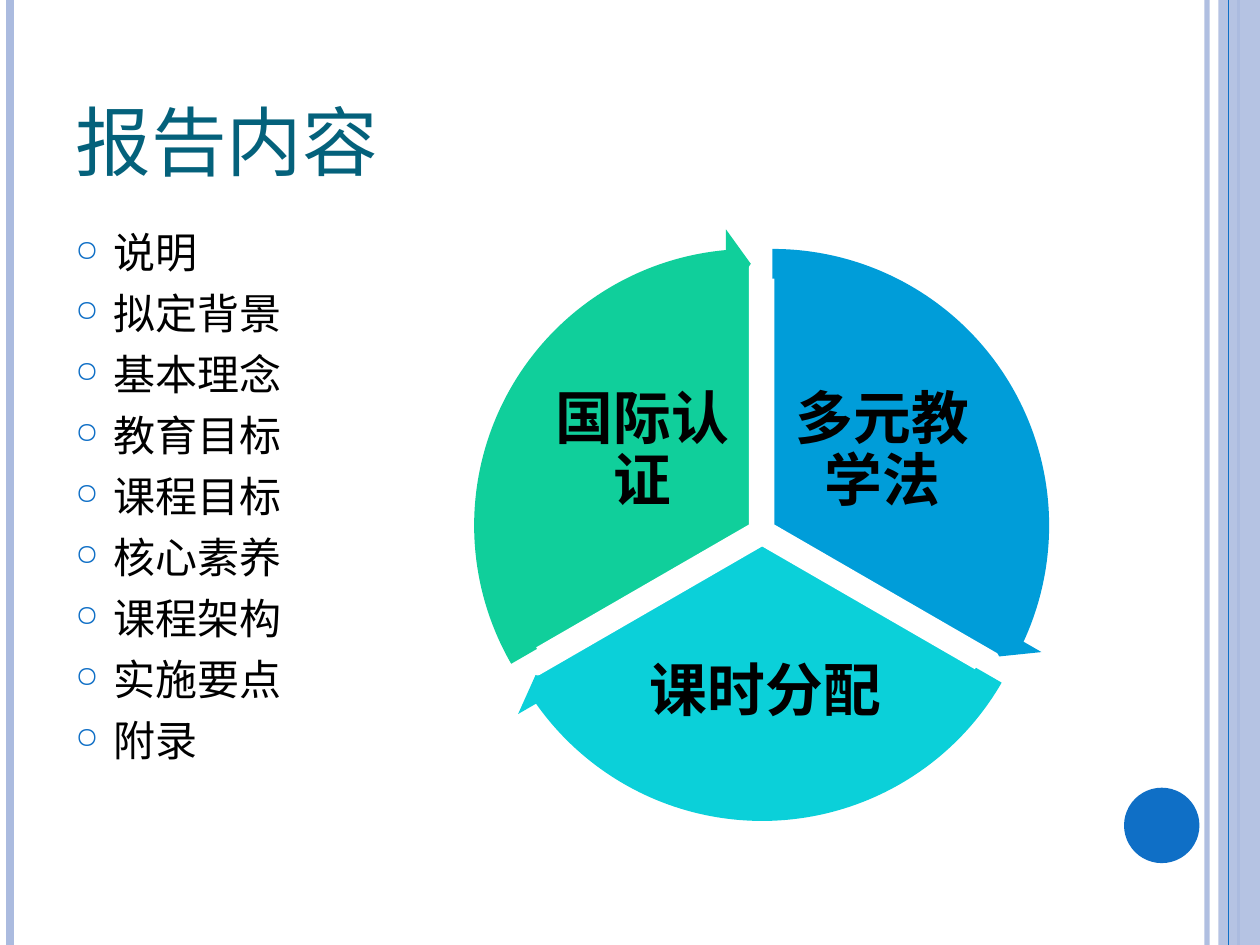
from lxml import etree
from pptx import Presentation
from pptx import util as u
from pptx.dml.color import RGBColor
from pptx.enum import shapes, text
from pptx.oxml import ns

FONT = "TeX Gyre Schola"
BLACK = RGBColor(0x00, 0x00, 0x00)
WHITE = RGBColor(0xFF, 0xFF, 0xFF)
TEAL = RGBColor(0x04, 0x61, 0x7B)
BLUE = RGBColor(0x0F, 0x6F, 0xC6)
LAVENDER = RGBColor(0xAB, 0xBB, 0xDF)
SKY = RGBColor(0x00, 0x9D, 0xD9)
CYAN = RGBColor(0x0B, 0xD0, 0xD9)
GREEN = RGBColor(0x10, 0xCF, 0x9B)

WIDTH, HEIGHT = 25.4, 19.05
PIE_SIZE, ARROW_SIZE = 10.67, 11.99
TOPICS = ["说明", "拟定背景", "基本理念", "教育目标", "课程目标",
          "核心素养", "课程架构", "实施要点", "附录"]
# label, colour, pie corner, pie angles, text frame, arrow corner, arrow angles
SECTORS = [
    ("多元教学法", SKY, (10.24, 5.26), (162, 18), (15.88, 7.52, 3.81, 3.18),
     (9.58, 4.6), (14.73, 161.99)),
    ("课时分配", CYAN, (10.03, 5.64), (18, 90), (12.57, 12.57, 5.72, 2.79),
     (9.37, 4.98), (86.72, 18)),
    ("国际认证", GREEN, (9.8, 5.26), (90, 162), (11.05, 7.52, 3.81, 3.18),
     (9.14, 4.6), (158.73, 90)),
]


def cm(*lengths):
    """Turn numbers into centimetre lengths."""
    return [u.Cm(length) for length in lengths]


def set_alpha(element, percent):
    """Make the solid colour inside an element partly transparent."""
    colour = next(element.iter(ns.qn("a:srgbClr")))
    etree.SubElement(colour, ns.qn("a:alpha")).set("val", str(percent * 1000))


def style_font(paragraph, size, colour, bold=False):
    """Set the font of a whole paragraph."""
    font = paragraph.font
    font.name, font.size, font.bold = FONT, u.Pt(size), bold
    font.color.rgb = colour


def add_rule(page, x, colour, weight, alpha=100):
    """Draw a vertical line over the full slide height."""
    rule = page.shapes.add_connector(
        shapes.MSO_CONNECTOR.STRAIGHT, *cm(x, 0, x, HEIGHT))
    rule.line.color.rgb, rule.line.width = colour, u.Pt(weight)
    if alpha < 100:
        set_alpha(rule.line._get_or_add_ln(), alpha)
    etree.SubElement(rule._element.spPr, ns.qn("a:effectLst"))


def add_shape(parent, kind, frame, colour, adjustments=(), outline=None):
    """Add a flat preset shape with an optional outline."""
    shape = parent.shapes.add_shape(kind, *cm(*frame))
    shape.shadow.inherit = False
    shape.fill.solid()
    shape.fill.fore_color.rgb = colour
    for index, value in enumerate(adjustments):
        shape.adjustments[index] = value
    if outline is None:
        shape.line.fill.background()
    else:
        shape.line.color.rgb, shape.line.width = outline, u.Pt(2)
    return shape


def add_decoration(page):
    """Draw the side bars and the round badge."""
    kinds = shapes.MSO_SHAPE
    add_rule(page, 24.33, LAVENDER, 3, 93)
    add_rule(page, 0.2, LAVENDER, 4.5)
    add_rule(page, 24.97, LAVENDER, 1.5)
    band = add_shape(page, kinds.RECTANGLE, (24.56, 0, 0.84, HEIGHT), LAVENDER)
    set_alpha(band._element.spPr, 87)
    add_rule(page, 24.76, BLUE, 0.75)
    add_shape(page, kinds.OVAL, (22.66, 15.88, 1.52, 1.52), BLUE)


def set_title(page, wording):
    """Place and format the title placeholder."""
    title = page.shapes.title
    title.left, title.top, title.width, title.height = cm(1.27, 0.76, 20.75, 3.18)
    frame = title.text_frame
    frame.text = wording
    frame.auto_size = text.MSO_AUTO_SIZE.NONE
    frame.vertical_anchor = text.MSO_ANCHOR.BOTTOM
    para = frame.paragraphs[0]
    para.alignment = text.PP_ALIGN.LEFT
    style_font(para, 54, TEAL)
    para.runs[0].font._element.set("cap", "small")


def add_bullet(para):
    """Give a paragraph a hanging blue ring bullet."""
    properties = para._p.get_or_add_pPr()
    indent = u.Cm(0.76)
    properties.set("marL", str(indent))
    properties.set("indent", str(-indent))
    colour = etree.Element(ns.qn("a:buClr"))
    etree.SubElement(colour, ns.qn("a:srgbClr")).set("val", str(BLUE))
    size = etree.Element(ns.qn("a:buSzPct"))
    size.set("val", "70000")
    ring = etree.Element(ns.qn("a:buChar"))
    ring.set("char", "○")
    font_defaults = properties.find(ns.qn("a:defRPr"))
    for element in (colour, size, ring):
        font_defaults.addprevious(element)


def add_topics(page, topics):
    """Add the bulleted list of topics."""
    box = page.shapes.add_textbox(*cm(1.27, 4.45, 10.16, 12.7))
    frame = box.text_frame
    frame.word_wrap = True
    frame.text = "\n".join(topics)
    for para in frame.paragraphs:
        para.space_before = u.Pt(6)
        style_font(para, 24, BLACK)
        add_bullet(para)


def add_label(group, wording, place):
    """Add a bold centred sector label."""
    frame = group.shapes.add_textbox(*cm(*place)).text_frame
    frame.word_wrap = True
    frame.vertical_anchor = text.MSO_ANCHOR.MIDDLE
    frame.margin_left = frame.margin_right = u.Cm(0.12)
    frame.margin_top = frame.margin_bottom = u.Cm(0.12)
    frame.text = wording
    para = frame.paragraphs[0]
    para.alignment = text.PP_ALIGN.CENTER
    para.line_spacing = 0.9
    style_font(para, 33, BLACK, bold=True)


def add_cycle(page, sectors):
    """Build the three-part cycle of sectors and arrows."""
    kinds = shapes.MSO_SHAPE
    group = page.shapes.add_group_shape()
    for label, colour, corner, angles, place, _, _ in sectors:
        add_shape(group, kinds.PIE, (*corner, PIE_SIZE, PIE_SIZE), colour,
                  angles, WHITE)
        add_label(group, label, place)
    for _, colour, _, _, _, corner, (end, start) in sectors:
        add_shape(group, kinds.CIRCULAR_ARROW, (*corner, ARROW_SIZE, ARROW_SIZE),
                  colour, (0.05, 3.28, end, start, 0.06))


def main():
    """Build and save the deck."""
    deck = Presentation()
    deck.slide_width, deck.slide_height = cm(WIDTH, HEIGHT)
    page = deck.slides.add_slide(deck.slide_layouts[5])
    add_decoration(page)
    set_title(page, "报告内容")
    add_topics(page, TOPICS)
    add_cycle(page, SECTORS)
    deck.save("out.pptx")


if __name__ == "__main__":
    main()
